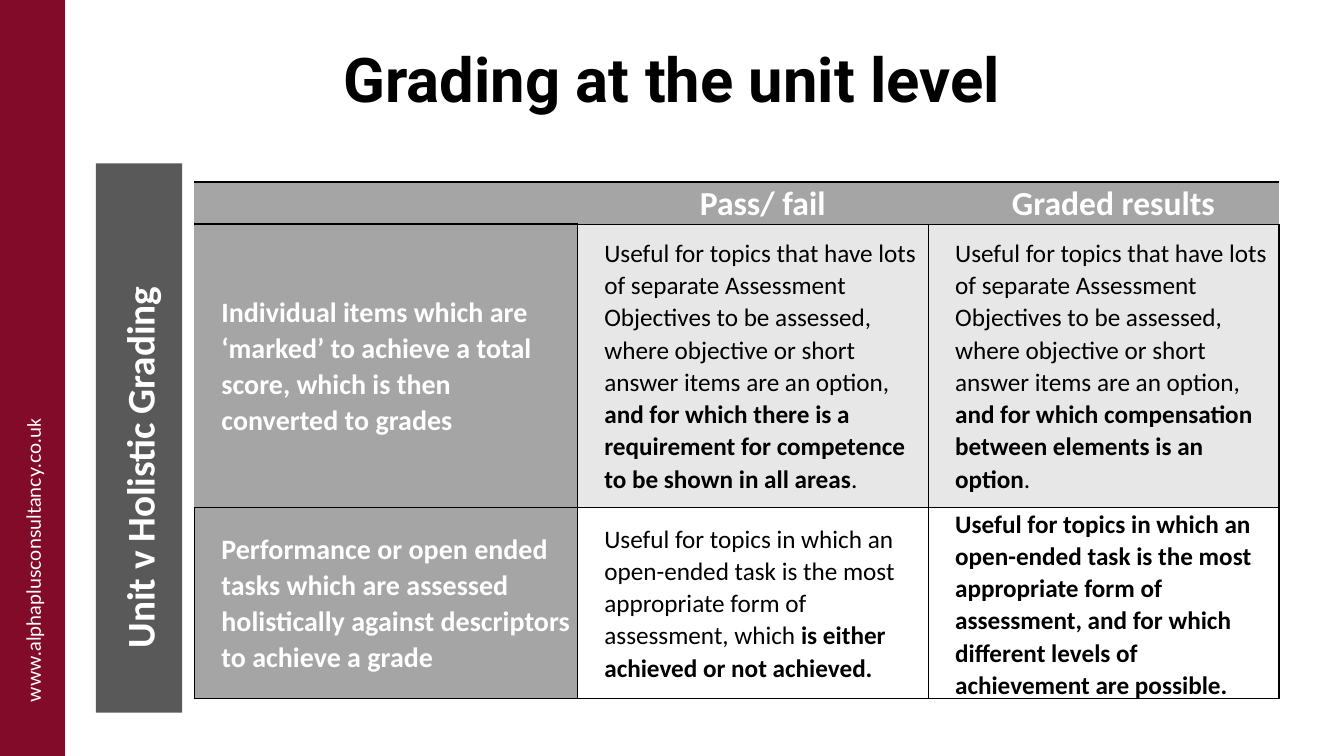
from lxml.etree import SubElement
from pptx import Presentation
from pptx.dml.color import RGBColor
from pptx.enum.shapes import MSO_SHAPE as SHAPE
from pptx.enum.text import MSO_ANCHOR as ANCHOR, PP_ALIGN as ALIGN
from pptx.oxml.ns import qn
from pptx.util import Cm, Pt

BLACK, WHITE = "000000", "FFFFFF"
MAROON, DARK, MID, PALE = "810B29", "595959", "A5A5A5", "E7E7E7"

COLUMNS = (9.65, 8.84, 8.84)
ROWS = (1.07, 7.14, 4.82)
HEADERS = ("", "Pass/ fail", "Graded results")
TOPICS = ("Useful for topics that have lots of separate Assessment Objectives to be "
          "assessed, where objective or short answer items are an option,")
OPEN_ENDED = ("Useful for topics in which an open-ended task is the most appropriate "
              "form of assessment, ")
# Each body cell is a list of (text, bold) runs
BODY = (
    ([("Individual items which are ‘marked’ to achieve a total score, which is then "
       "converted to grades", True)],
     [(TOPICS + " ", False),
      ("and for which there is a requirement for competence to be shown in all areas", True),
      (".", False)],
     [(TOPICS, False),
      (" and for which compensation between elements is an option", True),
      (".", False)]),
    ([("Performance or open ended tasks which are assessed holistically against "
       "descriptors to achieve a grade", True)],
     [(OPEN_ENDED + "which ", False), ("is either achieved or not achieved.", True)],
     [(OPEN_ENDED + "and for which different levels of achievement are possible.", True)]),
)


def rgb(value):
    return RGBColor.from_string(value)


def add_run(p, text, size, color, bold=False, name="Calibri"):
    r = p.add_run()
    r.text = text
    f = r.font
    f.name, f.size, f.bold = name, Pt(size), bold
    f.color.rgb = rgb(color)


def add_panel(s, x, y, w, h, color):
    sp = s.shapes.add_shape(SHAPE.RECTANGLE, Cm(x), Cm(y), Cm(w), Cm(h))
    sp.shadow.inherit = False
    sp.fill.solid()
    sp.fill.fore_color.rgb = rgb(color)
    sp.line.fill.background()


def add_upright_text(s, x, y, w, h):
    """Text box that reads upwards inside the given box; returns its paragraph."""
    sp = s.shapes.add_textbox(Cm(x + (w - h) / 2), Cm(y + (h - w) / 2), Cm(h), Cm(w))
    sp.rotation = 270
    tf = sp.text_frame
    tf.word_wrap = True
    tf.vertical_anchor = ANCHOR.MIDDLE
    return tf.paragraphs[0]


def add_edge_strip(s, x, y, w, h):
    add_panel(s, x, y, w, h, MAROON)
    p = add_upright_text(s, x + 0.32, y + 10.02, 1.02, 8.2)
    p.alignment = ALIGN.CENTER
    add_run(p, "www.alphaplusconsultancy.co.u", 14, WHITE, name="Lato")
    add_run(p, "k", 14, WHITE)


def add_title(s, x, y, w, h):
    tf = s.shapes.add_textbox(Cm(x), Cm(y), Cm(w), Cm(h)).text_frame
    tf.margin_left = tf.margin_right = tf.margin_top = tf.margin_bottom = 0
    tf.word_wrap = False
    tf.vertical_anchor = ANCHOR.MIDDLE
    p = tf.paragraphs[0]
    p.alignment = ALIGN.CENTER
    p.line_spacing = 0.9
    add_run(p, "Grading at the unit level", 44, BLACK, True, "Roboto")


def add_theme_banner(s, x, y, w, h):
    add_panel(s, x, y, w, h, DARK)
    p = add_upright_text(s, x + 0.36, y, w - 0.72, 12.47)
    add_run(p, "Unit v Holistic Grading", 28, WHITE, True)


def set_borders(cell, **widths):
    """Border widths in points by side: L, R, T, B; 0 means no line."""
    tcPr = cell._tc.get_or_add_tcPr()
    for i, side in enumerate("LRTB"):
        width = widths.get(side, 1)
        ln = tcPr.makeelement(qn(f"a:ln{side}"), {"w": str(Pt(width))})
        if width:
            fill = SubElement(ln, qn("a:solidFill"))
            SubElement(fill, qn("a:srgbClr"), val=BLACK)
        else:
            SubElement(ln, qn("a:noFill"))
        tcPr.insert(i, ln)


def fill_cell(cell, runs, size, color, fill, align=ALIGN.LEFT):
    cell.fill.solid()
    cell.fill.fore_color.rgb = rgb(fill)
    cell.vertical_anchor = ANCHOR.MIDDLE
    cell.margin_left = cell.margin_right = Cm(0.18)
    cell.margin_top = cell.margin_bottom = 0
    p = cell.text_frame.paragraphs[0]
    p.alignment = align
    p.line_spacing = 1.05
    p.space_after = Pt(8)
    pPr = p._p.get_or_add_pPr()
    pPr.set("marL", str(Cm(0.5)))
    pPr.set("indent", "0")
    for text, bold in runs:
        add_run(p, text, size, color, bold)


def add_grading_table(s, x, y):
    table = s.shapes.add_table(len(ROWS), len(COLUMNS), Cm(x), Cm(y),
                               Cm(sum(COLUMNS)), Cm(sum(ROWS))).table
    for column, width in zip(table.columns, COLUMNS):
        column.width = Cm(width)
    for row, height in zip(table.rows, ROWS):
        row.height = Cm(height)

    for j, header in enumerate(HEADERS):
        cell = table.cell(0, j)
        runs = [(header, True)] if header else []
        fill_cell(cell, runs, 24, WHITE, MID, ALIGN.CENTER)
        set_borders(cell, L=0, R=0, T=2, B=1 if header else 2)

    for i, (row, fill) in enumerate(zip(BODY, (PALE, WHITE)), 1):
        for j, runs in enumerate(row):
            cell = table.cell(i, j)
            if j == 0:
                fill_cell(cell, runs, 20, WHITE, MID)
            else:
                fill_cell(cell, runs, 18, BLACK, fill)
            first = i == 1 and j == 0
            set_borders(cell, L=0 if first else 1, T=2 if first else 1)


def main():
    prs = Presentation()
    prs.slide_width, prs.slide_height = Cm(33.87), Cm(19.05)
    s = prs.slides.add_slide(prs.slide_layouts[6])
    add_edge_strip(s, 0, 0, 1.64, 19.05)
    add_title(s, 6.5, 1.42, 20.88, 1.32)
    add_theme_banner(s, 2.42, 4.12, 2.17, 13.84)
    add_grading_table(s, 4.9, 4.58)
    prs.save("out.pptx")


if __name__ == "__main__":
    main()
